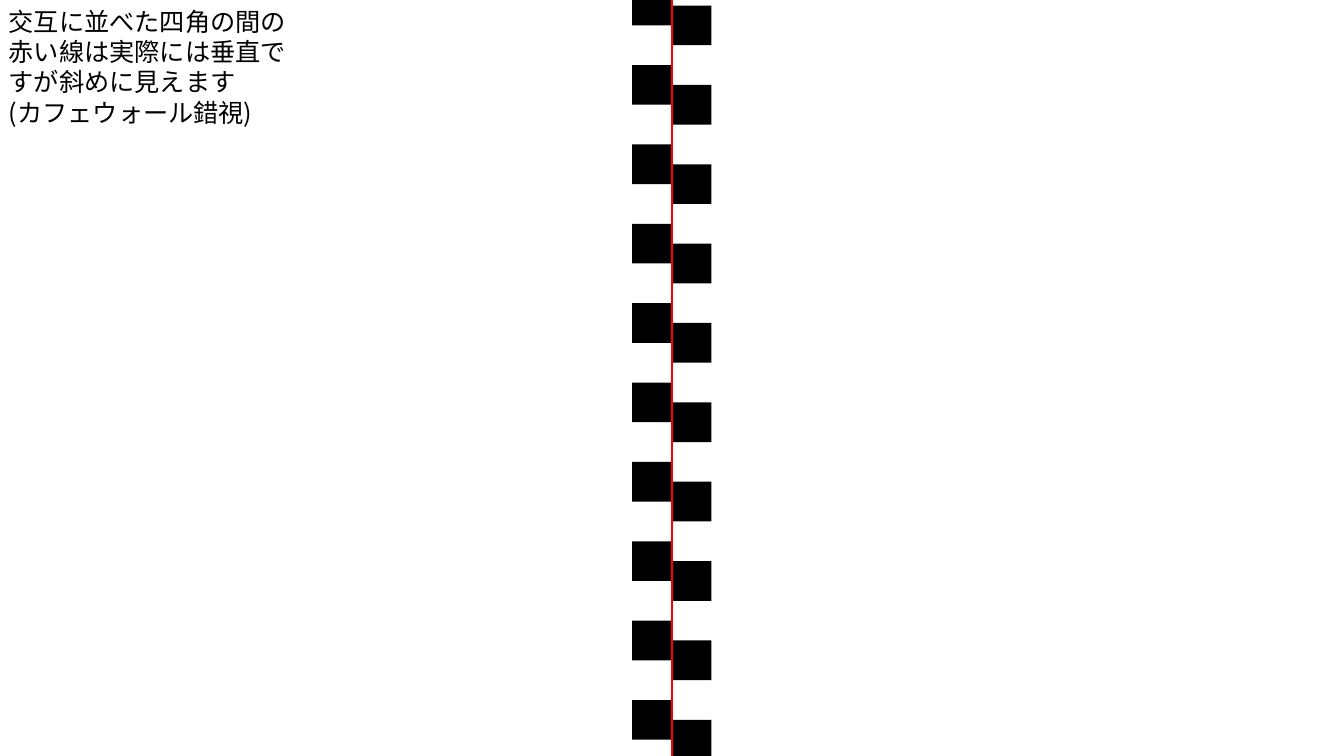
from lxml import etree
from pptx import Presentation
from pptx.dml.color import RGBColor
from pptx.enum import shapes, text
from pptx.oxml import ns
from pptx.util import Cm, Pt

LINES = [
    "交互に並べた四角の間の赤い線は実際には垂直ですが斜めに見えます",
    "(カフェウォール錯視)",
]
FONT = "Noto Sans CJK JP"
BLACK = RGBColor(0, 0, 0)
RED = RGBColor(255, 0, 0)

ROWS = 10
SIDE = 1
STEP = 2 * SIDE
AXIS = 16.93
COLUMNS = [(AXIS - SIDE, -0.36), (AXIS, 0.14)]


def add_text(slide, lines, box, size=18, font=FONT, color=BLACK):
    frame = slide.shapes.add_textbox(*map(Cm, box)).text_frame
    frame.word_wrap = True
    frame.auto_size = text.MSO_AUTO_SIZE.SHAPE_TO_FIT_TEXT
    for i, line in enumerate(lines):
        para = frame.paragraphs[0] if i == 0 else frame.add_paragraph()
        run = para.add_run()
        run.text = line
        run.font.size = Pt(size)
        run.font.name = font
        run.font.color.rgb = color
        east = etree.SubElement(run.font._element, ns.qn("a:ea"))
        east.set("typeface", font)


def add_square(group, left, top):
    square = group.shapes.add_shape(
        shapes.MSO_SHAPE.RECTANGLE, Cm(left), Cm(top), Cm(SIDE), Cm(SIDE))
    square.shadow.inherit = False
    square.fill.solid()
    square.fill.fore_color.rgb = BLACK
    square.line.fill.background()


def add_axis(group, x, start, end):
    axis = group.shapes.add_connector(
        shapes.MSO_CONNECTOR.STRAIGHT, Cm(x), Cm(start), Cm(x), Cm(end))
    axis.line.color.rgb = RED
    axis.line.width = Pt(1.5)
    etree.SubElement(axis._element.spPr, ns.qn("a:effectLst"))


def main():
    deck = Presentation()
    deck.slide_width, deck.slide_height = Cm(33.87), Cm(19.05)
    slide = deck.slides.add_slide(deck.slide_layouts[6])
    wall = slide.shapes.add_group_shape()
    for row in range(ROWS):
        for left, top in COLUMNS:
            add_square(wall, left, top + row * STEP)
    add_axis(wall, AXIS, 19.63, -1.24)
    add_text(slide, LINES, (-0.03, 0.03, 7.54, 3.33))
    deck.save("out.pptx")


if __name__ == "__main__":
    main()
